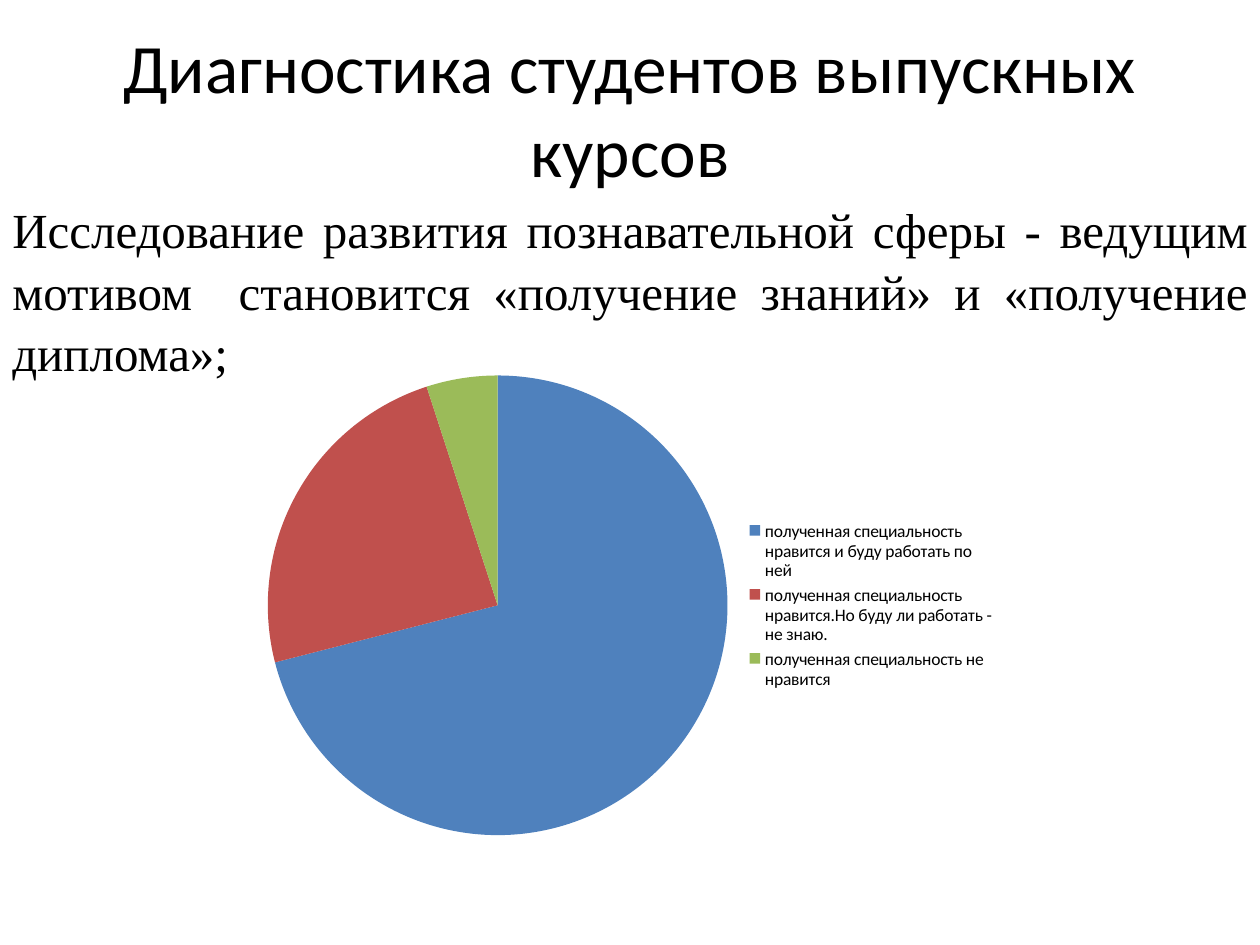
"""Builds a slide on graduating students' motives with a pie chart of their career plans."""
from dataclasses import dataclass

from lxml.etree import SubElement
from pptx import Presentation
from pptx.chart.data import CategoryChartData
from pptx.dml.color import RGBColor
from pptx.enum.chart import XL_CHART_TYPE, XL_LEGEND_POSITION
from pptx.enum.text import MSO_ANCHOR, PP_ALIGN
from pptx.oxml.ns import qn
from pptx.slide import Slide
from pptx.util import Inches, Pt

WIDTH, HEIGHT = Inches(10), Inches(7.5)
COLORS = {"text": "000000", "likes": "4F81BD", "unsure": "C0504D", "dislikes": "9BBB59"}


@dataclass(frozen=True)
class Area:
    """Place on the slide, in percent of its width and height."""
    left: float
    top: float
    width: float
    height: float

    def lengths(self) -> tuple[int, ...]:
        shares = (self.left, self.top, self.width, self.height)
        return tuple(int(share / 100 * side) for share, side in zip(shares, (WIDTH, HEIGHT) * 2))


@dataclass(frozen=True)
class Passage:
    area: Area
    text: str
    font: str
    size: float
    layout: dict


@dataclass(frozen=True)
class Answer:
    label: str
    percent: int
    color: str


PASSAGES = (
    Passage(
        Area(0, 20.53, 100, 20.13),
        "Исследование развития познавательной сферы - ведущим мотивом  становится "
        "«получение знаний» и «получение диплома»;",
        "Times New Roman", 28, {"alignment": PP_ALIGN.JUSTIFY, "line_spacing": 1.05},
    ),
    Passage(
        Area(5, 4, 90, 14.8), "Диагностика студентов выпускных курсов",
        "Calibri", 39.6, {"alignment": PP_ALIGN.CENTER},
    ),
)
ANSWERS = (
    Answer("полученная специальность нравится и буду работать по ней", 71, "likes"),
    Answer("полученная специальность нравится.Но буду ли работать - не знаю.", 24, "unsure"),
    Answer("полученная специальность не  нравится", 5, "dislikes"),
)
CHART_AREA = Area(20, 34.4, 60, 59.33)
PIE_LAYOUT = {
    "layoutTarget": "inner", "xMode": "edge", "yMode": "edge",
    "x": 0.02, "y": 0.09, "w": 0.61, "h": 0.82,
}


def apply(target: object, values: dict) -> None:
    for name, value in values.items():
        setattr(target, name, value)


def style_font(font: object, name: str, size: float) -> None:
    apply(font, {"name": name, "size": Pt(size)})
    font.color.rgb = RGBColor.from_string(COLORS["text"])


def draw_passage(slide: Slide, passage: Passage) -> None:
    frame = slide.shapes.add_textbox(*passage.area.lengths()).text_frame
    apply(frame, {"word_wrap": True, "vertical_anchor": MSO_ANCHOR.MIDDLE})
    paragraph = frame.paragraphs[0]
    apply(paragraph, passage.layout)
    run = paragraph.add_run()
    run.text = passage.text
    style_font(run.font, passage.font, passage.size)


def place_pie(chart: object) -> None:
    plot_area = chart.plots[0]._element.getparent()
    layout = plot_area.find(qn("c:layout"))
    if layout is None:
        layout = SubElement(plot_area, qn("c:layout"))
        plot_area.insert(0, layout)
    manual = SubElement(layout, qn("c:manualLayout"))
    for name, value in PIE_LAYOUT.items():
        SubElement(manual, qn(f"c:{name}")).set("val", str(value))


def draw_answers(slide: Slide, area: Area, answers: tuple[Answer, ...]) -> None:
    survey = CategoryChartData()
    survey.categories = [answer.label for answer in answers]
    survey.add_series("Series 1", [answer.percent for answer in answers])
    chart = slide.shapes.add_chart(XL_CHART_TYPE.PIE, *area.lengths(), survey).chart
    apply(chart, {"has_title": False, "has_legend": True})
    apply(chart.legend, {"position": XL_LEGEND_POSITION.RIGHT, "include_in_layout": False})
    style_font(chart.font, "Calibri", 10)
    pie = chart.plots[0]
    pie.vary_by_categories = True
    for index, answer in enumerate(answers):
        fill = pie.series[0].points[index].format.fill
        fill.solid()
        fill.fore_color.rgb = RGBColor.from_string(COLORS[answer.color])
    place_pie(chart)


def main() -> None:
    deck = Presentation()
    apply(deck, {"slide_width": WIDTH, "slide_height": HEIGHT})
    slide = deck.slides.add_slide(deck.slide_layouts[6])
    for passage in PASSAGES:
        draw_passage(slide, passage)
    draw_answers(slide, CHART_AREA, ANSWERS)
    deck.save("out.pptx")


if __name__ == "__main__":
    main()
